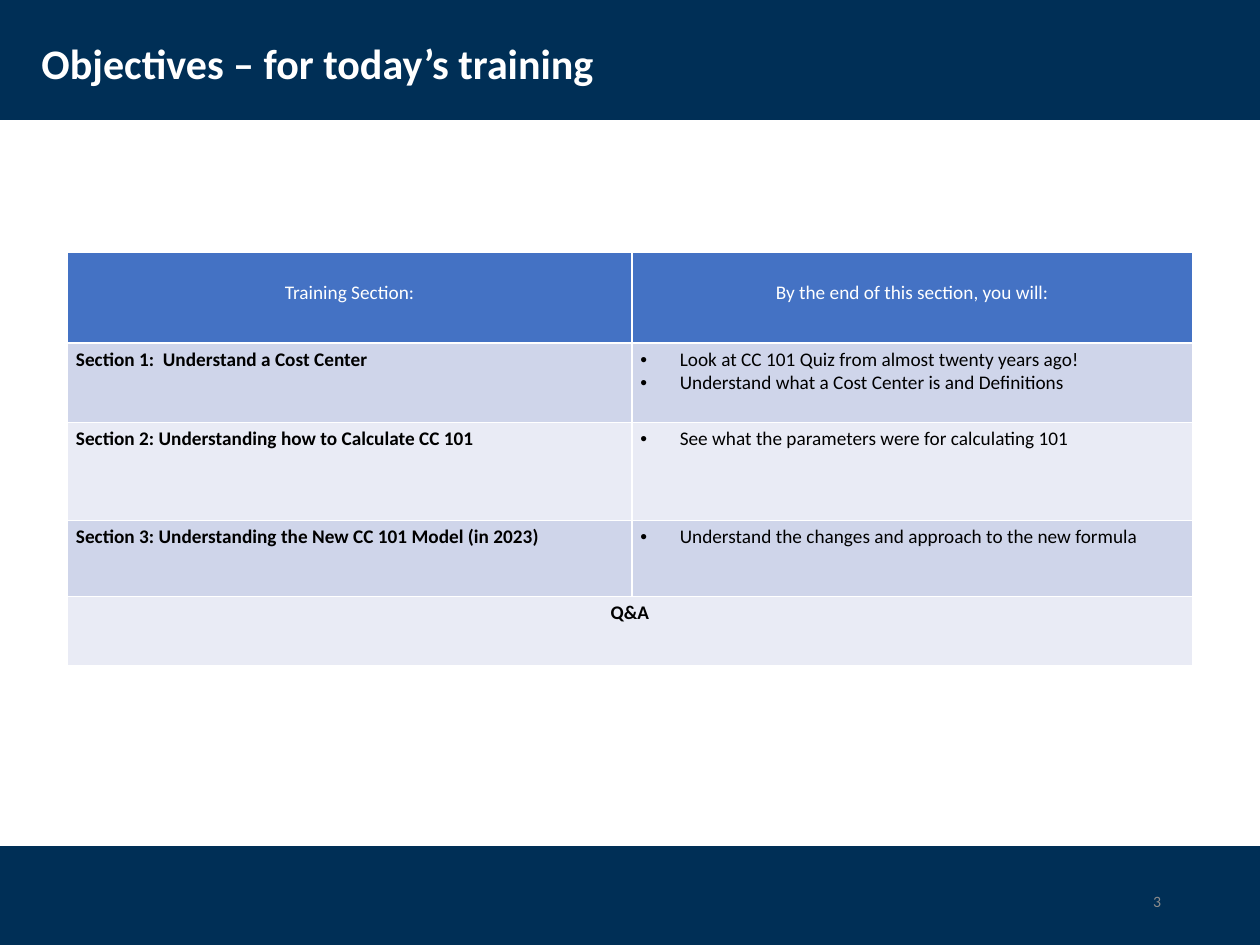
import pptx
import pptx.dml.color
import pptx.enum.shapes
import pptx.enum.text
import pptx.oxml
import pptx.oxml.ns
import pptx.util

Pt = pptx.util.Pt
ALIGN = pptx.enum.text.PP_ALIGN
MIDDLE = pptx.enum.text.MSO_ANCHOR.MIDDLE
COLORS = {"navy": "002F56", "white": "FFFFFF", "black": "000000", "gray": "8C8C8C",
          "header": "4472C4", "band_dark": "CFD5EA", "band_light": "E9EBF5"}
NAMESPACE = pptx.oxml.ns.nsdecls("a")


def color(name):
    return pptx.dml.color.RGBColor.from_string(COLORS[name])


def write(para, text, size, ink, bold=False, align=ALIGN.LEFT):
    para.alignment = align
    span = para.add_run()
    span.text = text
    for key, value in {"name": "Calibri", "size": Pt(size), "bold": bold}.items():
        setattr(span.font, key, value)
    span.font.color.rgb = color(ink)


deck = pptx.Presentation()
deck.slide_width, deck.slide_height = Pt(720), Pt(540)
slide = deck.slides.add_slide(deck.slide_layouts[5])

# Navy bands at top and bottom, behind the title
for top, height in ((0, 68.5), (483.5, 56.5)):
    band = slide.shapes.add_shape(pptx.enum.shapes.MSO_SHAPE.RECTANGLE,
                                  0, Pt(top), Pt(720), Pt(height))
    band.shadow.inherit = False
    band.fill.solid()
    band.fill.fore_color.rgb = color("navy")
    band.line.fill.background()
    slide.shapes._spTree.insert(2, band._element)

# Title
title = slide.shapes.title
for key, value in {"left": 16.5, "top": 13, "width": 620.5, "height": 49}.items():
    setattr(title, key, Pt(value))
title.text_frame.vertical_anchor = MIDDLE
title.text_frame.paragraphs[0].line_spacing = 0.9
write(title.text_frame.paragraphs[0], "Objectives – for today’s training", 24, "white", True)

# Table of sections: left text, list of outcomes
sections = [
    ("Training Section:", ["By the end of this section, you will:"]),
    ("Section 1:  Understand a Cost Center",
     ["Look at CC 101 Quiz from almost twenty years ago!",
      "Understand what a Cost Center is and Definitions"]),
    ("Section 2: Understanding how to Calculate CC 101",
     ["See what the parameters were for calculating 101"]),
    ("Section 3: Understanding the New CC 101 Model (in 2023)",
     ["Understand the changes and approach to the new formula"]),
    ("Q&A", []),
]
row_heights = [51.6, 45.6, 56, 43.4, 39.4]
table = slide.shapes.add_table(len(sections), 2, Pt(38.5), Pt(144.4),
                               Pt(643), Pt(sum(row_heights))).table
for column, width in zip(table.columns, (322.6, 320.4)):
    column.width = Pt(width)
last = len(sections) - 1
table.cell(last, 0).merge(table.cell(last, 1))

for row, (section, outcomes) in enumerate(sections):
    table.rows[row].height = Pt(row_heights[row])
    is_header = row == 0
    fill = "header" if is_header else ("band_dark" if row % 2 else "band_light")
    for column, lines in enumerate(([section], outcomes)):
        cell = table.cell(row, column)
        margins = {"left": 4.9, "right": 4.9, "top": 16.3 if is_header else 2.7, "bottom": 2.7}
        for side, value in margins.items():
            setattr(cell, f"margin_{side}", Pt(value))
        properties = cell._tc.get_or_add_tcPr()
        for side in "LRTB":
            properties.append(pptx.oxml.parse_xml(
                f'<a:ln{side} {NAMESPACE} w="12700"><a:solidFill>'
                f'<a:srgbClr val="{COLORS["white"]}"/></a:solidFill></a:ln{side}>'))
        cell.fill.solid()
        cell.fill.fore_color.rgb = color(fill)
        for index, line in enumerate(lines):
            frame = cell.text_frame
            para = frame.add_paragraph() if index else frame.paragraphs[0]
            if column == 1 and not is_header:
                settings = para._p.get_or_add_pPr()
                settings.set("marL", str(Pt(22.5)))
                settings.set("indent", str(-Pt(22.5)))
                settings.append(pptx.oxml.parse_xml(f'<a:buFont {NAMESPACE} typeface="Arial"/>'))
                settings.append(pptx.oxml.parse_xml(f'<a:buChar {NAMESPACE} char="•"/>'))
            write(para, line, 11, "white" if is_header else "black",
                  bold=column == 0 and not is_header,
                  align=ALIGN.CENTER if row in (0, last) else ALIGN.LEFT)

# Slide number
box = slide.shapes.add_textbox(Pt(508.5), Pt(500.5), Pt(162), Pt(28.8))
box.text_frame.word_wrap = True
box.text_frame.vertical_anchor = MIDDLE
write(box.text_frame.paragraphs[0], "3", 9, "gray", align=ALIGN.RIGHT)

deck.save("out.pptx")
